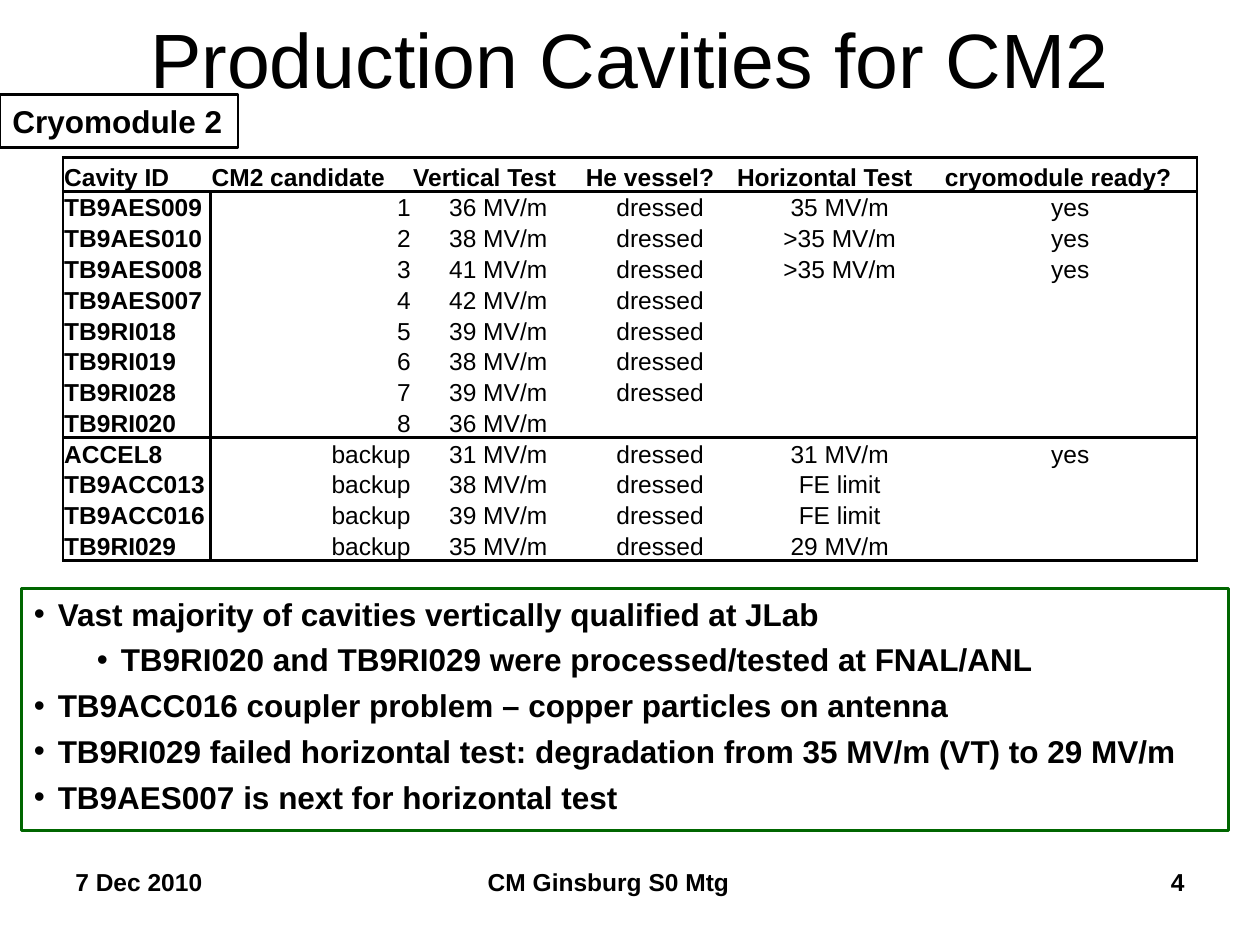
from lxml import etree
from pptx import Presentation
from pptx.dml.color import RGBColor
from pptx.enum import shapes, text
from pptx.oxml import ns
from pptx.util import Inches, Pt

LEFT, MID, RIGHT = text.PP_ALIGN.LEFT, text.PP_ALIGN.CENTER, text.PP_ALIGN.RIGHT
WIDTHS = [1.17, 1.6, 1.37, 1.2, 1.65, 2.01]
HEAD, ROW = 0.27, 2.93 / 12
ALIGNS = [LEFT, RIGHT, MID, MID, MID, MID]
ROWS = [
    ["Cavity ID", "CM2 candidate", "Vertical Test", "He vessel?",
     "Horizontal Test", "cryomodule ready?"],
    ["TB9AES009", "1", "36 MV/m", "dressed", "35 MV/m", "yes"],
    ["TB9AES010", "2", "38 MV/m", "dressed", ">35 MV/m", "yes"],
    ["TB9AES008", "3", "41 MV/m", "dressed", ">35 MV/m", "yes"],
    ["TB9AES007", "4", "42 MV/m", "dressed", "", ""],
    ["TB9RI018", "5", "39 MV/m", "dressed", "", ""],
    ["TB9RI019", "6", "38 MV/m", "dressed", "", ""],
    ["TB9RI028", "7", "39 MV/m", "dressed", "", ""],
    ["TB9RI020", "8", "36 MV/m", "", "", ""],
    ["ACCEL8", "backup", "31 MV/m", "dressed", "31 MV/m", "yes"],
    ["TB9ACC013", "backup", "38 MV/m", "dressed", "FE limit", ""],
    ["TB9ACC016", "backup", "39 MV/m", "dressed", "FE limit", ""],
    ["TB9RI029", "backup", "35 MV/m", "dressed", "29 MV/m", ""],
]
NOTES = [
    (0, "Vast majority of cavities vertically qualified at JLab"),
    (1, "TB9RI020 and TB9RI029 were processed/tested at FNAL/ANL"),
    (0, "TB9ACC016 coupler problem – copper particles on antenna"),
    (0, "TB9RI029 failed horizontal test: degradation from 35 MV/m (VT) to 29 MV/m"),
    (0, "TB9AES007 is next for horizontal test"),
]


def color(code):
    return RGBColor.from_string(code)


def write(para, words, size=14, bold=False, align=LEFT):
    para.alignment = align
    if not words:
        # An empty cell still needs its text size, or its row grows.
        etree.SubElement(para._p, ns.qn("a:endParaRPr"), sz=str(size * 100))
        return
    run = para.add_run()
    run.text = words
    font = run.font
    font.name, font.size, font.bold = "Arial", Pt(size), bold
    font.color.rgb = color("000000")


def place(item, x, y, w, h):
    item.left, item.top = Inches(x), Inches(y)
    item.width, item.height = Inches(w), Inches(h)


def add_title(slide, words):
    title = slide.shapes.title
    place(title, 0.5, 0, 9, 0.92)
    frame = title.text_frame
    frame.auto_size = text.MSO_AUTO_SIZE.NONE
    frame.vertical_anchor = text.MSO_ANCHOR.MIDDLE
    write(frame.paragraphs[0], words, size=44, align=MID)


def add_label(slide, words, x, w, align):
    box = slide.shapes.add_textbox(Inches(x), Inches(6.83), Inches(w), Inches(0.52))
    box.text_frame.word_wrap = True
    write(box.text_frame.paragraphs[0], words, bold=True, align=align)


def add_box(slide, x, y, w, h, line, fill=None):
    box = slide.shapes.add_shape(shapes.MSO_SHAPE.RECTANGLE, Inches(x),
                                 Inches(y), Inches(w), Inches(h))
    box.shadow.inherit = False
    box.line.color.rgb = color(line)
    box.line.width = Pt(1.5)
    if fill:
        box.fill.solid()
        box.fill.fore_color.rgb = color(fill)
    else:
        box.fill.background()
    box.text_frame.vertical_anchor = text.MSO_ANCHOR.TOP
    return box.text_frame


def add_tag(slide, words):
    frame = add_box(slide, 0, 0.75, 1.89, 0.42, "000000", "FFFFFF")
    frame.word_wrap = False
    frame.vertical_anchor = text.MSO_ANCHOR.MIDDLE
    write(frame.paragraphs[0], words, size=18, bold=True)


def add_notes(slide):
    frame = add_box(slide, 0.17, 4.67, 9.58, 1.92, "006600")
    frame.word_wrap = True
    for i, (level, words) in enumerate(NOTES):
        para = frame.add_paragraph() if i else frame.paragraphs[0]
        para.level = level
        props = para._p.get_or_add_pPr()
        props.set("marL", str(Inches(0.19 + 0.5 * level)))
        props.set("indent", str(Inches(-0.19)))
        etree.SubElement(props, ns.qn("a:buFont"), typeface="Arial")
        etree.SubElement(props, ns.qn("a:buChar"), char="•")
        if i:
            para.space_before = Pt(4.6)
        write(para, words, size=18, bold=True)


def set_edges(cell, edges):
    """Draw the sides named in edges (of L, R, T, B) and clear the others."""
    props = cell._tc.get_or_add_tcPr()
    for side in "LRTB":
        line = etree.SubElement(props, ns.qn("a:ln" + side), w=str(Pt(1.5)))
        if side in edges:
            fill = etree.SubElement(line, ns.qn("a:solidFill"))
            etree.SubElement(fill, ns.qn("a:srgbClr"), val="000000")
        else:
            etree.SubElement(line, ns.qn("a:noFill"))


def find_edges(row, col):
    body = row > 0
    tests = {
        "L": col == 0 or (col == 1 and body),
        "R": col == len(WIDTHS) - 1 or (col == 0 and body),
        "T": row in (0, 1, 9),
        "B": row in (0, 8, 12),
    }
    return [side for side, drawn in tests.items() if drawn]


def add_grid(slide):
    table = slide.shapes.add_table(len(ROWS), len(WIDTHS), Inches(0.5),
                                   Inches(1.25), Inches(9), Inches(3.2)).table
    table.first_row = table.horz_banding = False
    for col, width in zip(table.columns, WIDTHS):
        col.width = Inches(width)
    for r, row in enumerate(ROWS):
        table.rows[r].height = Inches(ROW if r else HEAD)
        for c, words in enumerate(row):
            cell = table.cell(r, c)
            cell.margin_left = cell.margin_right = cell.margin_top = Inches(0.01)
            cell.margin_bottom = 0
            cell.vertical_anchor = text.MSO_ANCHOR.BOTTOM
            set_edges(cell, find_edges(r, c))
            cell.fill.background()
            write(cell.text_frame.paragraphs[0], words, bold=r == 0 or c == 0,
                  align=ALIGNS[c] if r else LEFT)


def main():
    deck = Presentation()
    deck.slide_width, deck.slide_height = Inches(10), Inches(7.5)
    slide = deck.slides.add_slide(deck.slide_layouts[5])
    add_label(slide, "7 Dec 2010", 0.5, 2.33, LEFT)
    add_label(slide, "CM Ginsburg S0 Mtg", 3.08, 3.5, MID)
    add_label(slide, "4", 7.17, 2.33, RIGHT)
    add_title(slide, "Production Cavities for CM2")
    add_notes(slide)
    add_tag(slide, "Cryomodule 2")
    add_grid(slide)
    deck.save("out.pptx")


if __name__ == "__main__":
    main()
